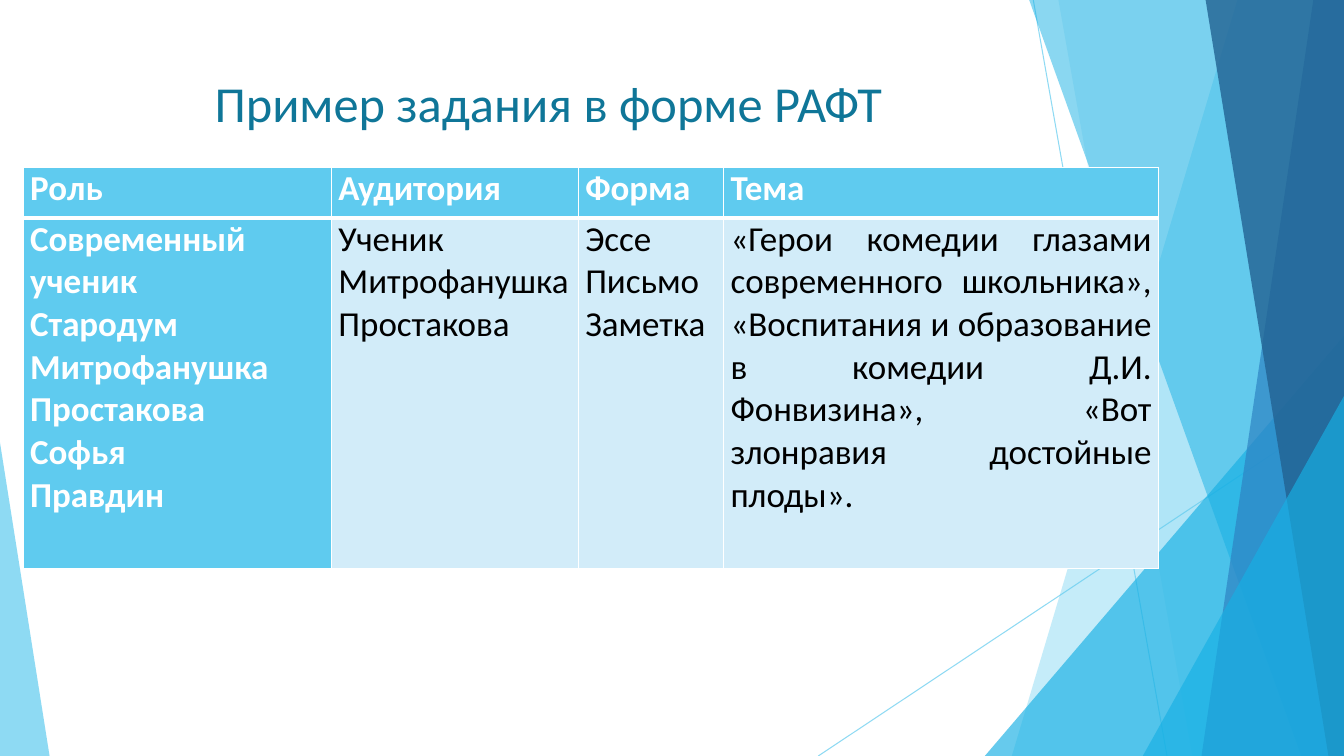
"""Build the slide with an example of a RAFT assignment."""
from dataclasses import dataclass

import lxml.etree
import pptx
import pptx.dml.color
import pptx.enum.shapes
import pptx.enum.text
import pptx.oxml.ns
import pptx.util

Cm = pptx.util.Cm
Pt = pptx.util.Pt
ALIGN = pptx.enum.text.PP_ALIGN
qn = pptx.oxml.ns.qn

WIDTH, HEIGHT = 33.87, 19.05
SKY, AZURE, PALE, WHITE = "5FCBEF", "17B0E4", "D2ECF9", "FFFFFF"


@dataclass
class Ray:
    """A thin line between two points."""
    x1: float
    y1: float
    x2: float
    y2: float


@dataclass
class Facet:
    """A four-sided plane reaching from its slanted left edge to the slide's right edge."""
    top_x: float
    bottom_x: float
    color: str
    opacity: int


@dataclass
class Wedge:
    """A right triangle standing on the bottom edge, with its apex at 0 (left) or 1 (right)."""
    left: float
    top: float
    width: float
    apex: int
    color: str
    opacity: int


@dataclass
class Column:
    """A table column with its heading and the lines below it."""
    width: float
    heading: str
    lines: list[str]


DECOR = [
    Ray(26.04, 0, 29.41, HEIGHT),
    Ray(WIDTH, 10.24, 20.62, HEIGHT),
    Facet(31.19, 25.5, SKY, 36),
    Facet(26.67, 30.05, SKY, 20),
    Wedge(24.82, 8.46, 9.05, 1, AZURE, 66),
    Facet(25.93, 32.79, AZURE, 50),
    Facet(33.1, 30.28, "2E83C3", 70),
    Facet(30.38, 33.48, "226292", 80),
    Wedge(28.8, 9.98, 5.07, 1, AZURE, 66),
    Wedge(0, 11.15, 1.25, 0, SKY, 70),
]

COLUMNS = [
    Column(7.77, "Роль", ["Современный ученик", "Стародум", "Митрофанушка",
                          "Простакова", "Софья", "Правдин"]),
    Column(6.22, "Аудитория", ["Ученик", "Митрофанушка", "Простакова"]),
    Column(3.66, "Форма", ["Эссе", "Письмо", "Заметка"]),
    Column(10.97, "Тема", [
        "«Герои комедии глазами современного школьника», «Воспитания и образование "
        "в комедии Д.И. Фонвизина», «Вот злонравия достойные плоды»."]),
]


def rgb(color: str) -> pptx.dml.color.RGBColor:
    """Turn a hex string into a colour."""
    return pptx.dml.color.RGBColor.from_string(color)


def set_opacity(element, percent: int) -> None:
    """Make every colour inside an element see-through."""
    for color in element.iter(qn("a:srgbClr")):
        lxml.etree.SubElement(color, qn("a:alpha"), val=str(percent * 1000))


def write(frame, lines: list[str], *, size: float, color: str,
          bold: bool = False, align=ALIGN.JUSTIFY) -> None:
    """Fill a text frame with one paragraph per line."""
    frame.word_wrap = True
    for index, line in enumerate(lines):
        paragraph = frame.paragraphs[0] if index == 0 else frame.add_paragraph()
        paragraph.alignment = align
        run = paragraph.add_run()
        run.text = line
        run.font.name = "Calibri"
        run.font.size = Pt(size)
        run.font.bold = bold
        run.font.color.rgb = rgb(color)


def draw_ray(shapes, ray: Ray) -> None:
    """Draw one thin line."""
    line = shapes.add_connector(pptx.enum.shapes.MSO_CONNECTOR.STRAIGHT,
                                Cm(ray.x1), Cm(ray.y1), Cm(ray.x2), Cm(ray.y2))
    line.line.color.rgb = rgb(SKY)
    line.line.width = Pt(0.75)
    set_opacity(line.element, 70)
    lxml.etree.SubElement(line.element.spPr, qn("a:effectLst"))


def paint(shape, color: str, opacity: int) -> None:
    """Give a shape a see-through fill, with no outline or shadow."""
    shape.shadow.inherit = False
    shape.line.fill.background()
    shape.fill.solid()
    shape.fill.fore_color.rgb = rgb(color)
    set_opacity(shape.element, opacity)


def draw_facet(shapes, facet: Facet) -> None:
    """Draw one four-sided plane."""
    top = Cm(-0.02)
    outline = shapes.build_freeform(Cm(facet.top_x), top)
    outline.add_line_segments([(Cm(WIDTH), top), (Cm(WIDTH), Cm(HEIGHT)),
                               (Cm(facet.bottom_x), Cm(HEIGHT))], close=True)
    paint(outline.convert_to_shape(), facet.color, facet.opacity)


def draw_wedge(shapes, wedge: Wedge) -> None:
    """Draw one right triangle."""
    triangle = shapes.add_shape(pptx.enum.shapes.MSO_SHAPE.ISOSCELES_TRIANGLE,
                                Cm(wedge.left), Cm(wedge.top),
                                Cm(wedge.width), Cm(HEIGHT - wedge.top))
    triangle.adjustments[0] = wedge.apex
    paint(triangle, wedge.color, wedge.opacity)


def set_borders(cell, top: float, bottom: float) -> None:
    """Draw white borders around a cell, 1 pt at the sides."""
    properties = cell._tc.get_or_add_tcPr()
    for side, width in (("L", 1), ("R", 1), ("T", top), ("B", bottom)):
        border = lxml.etree.SubElement(properties, qn(f"a:ln{side}"), w=str(Pt(width)))
        fill = lxml.etree.SubElement(border, qn("a:solidFill"))
        lxml.etree.SubElement(fill, qn("a:srgbClr"), val=WHITE)


def draw_cell(cell, lines: list[str], accent: bool, top: float, bottom: float) -> None:
    """Format and fill one table cell."""
    set_borders(cell, top, bottom)
    cell.fill.solid()
    cell.fill.fore_color.rgb = rgb(SKY if accent else PALE)
    cell.margin_left = cell.margin_right = Cm(0.18)
    cell.margin_top = cell.margin_bottom = Cm(0)
    write(cell.text_frame, lines, size=25, bold=accent,
          color=WHITE if accent else "000000")


def draw_assignment(shapes) -> None:
    """Draw the table of roles, audiences, forms and topics."""
    heights = [1.27, 8.84]
    table = shapes.add_table(2, len(COLUMNS), Cm(0.58), Cm(4.22),
                             Cm(sum(column.width for column in COLUMNS)),
                             Cm(sum(heights))).table
    for row, height in zip(table.rows, heights):
        row.height = Cm(height)
    for index, column in enumerate(COLUMNS):
        table.columns[index].width = Cm(column.width)
        draw_cell(table.cell(0, index), [column.heading], True, 1, 3)
        draw_cell(table.cell(1, index), column.lines, index == 0, 3, 1)


def main() -> None:
    """Build and save the presentation."""
    deck = pptx.Presentation()
    deck.slide_width, deck.slide_height = Cm(WIDTH), Cm(HEIGHT)
    shapes = deck.slides.add_slide(deck.slide_layouts[6]).shapes
    painters = {Ray: draw_ray, Facet: draw_facet, Wedge: draw_wedge}
    for part in DECOR:
        painters[type(part)](shapes, part)
    title = shapes.add_textbox(Cm(1.88), Cm(1.7), Cm(23.88), Cm(3.66))
    write(title.text_frame, ["Пример задания в форме РАФТ"],
          size=36, color="0F7698", align=ALIGN.CENTER)
    draw_assignment(shapes)
    deck.save("out.pptx")


if __name__ == "__main__":
    main()
